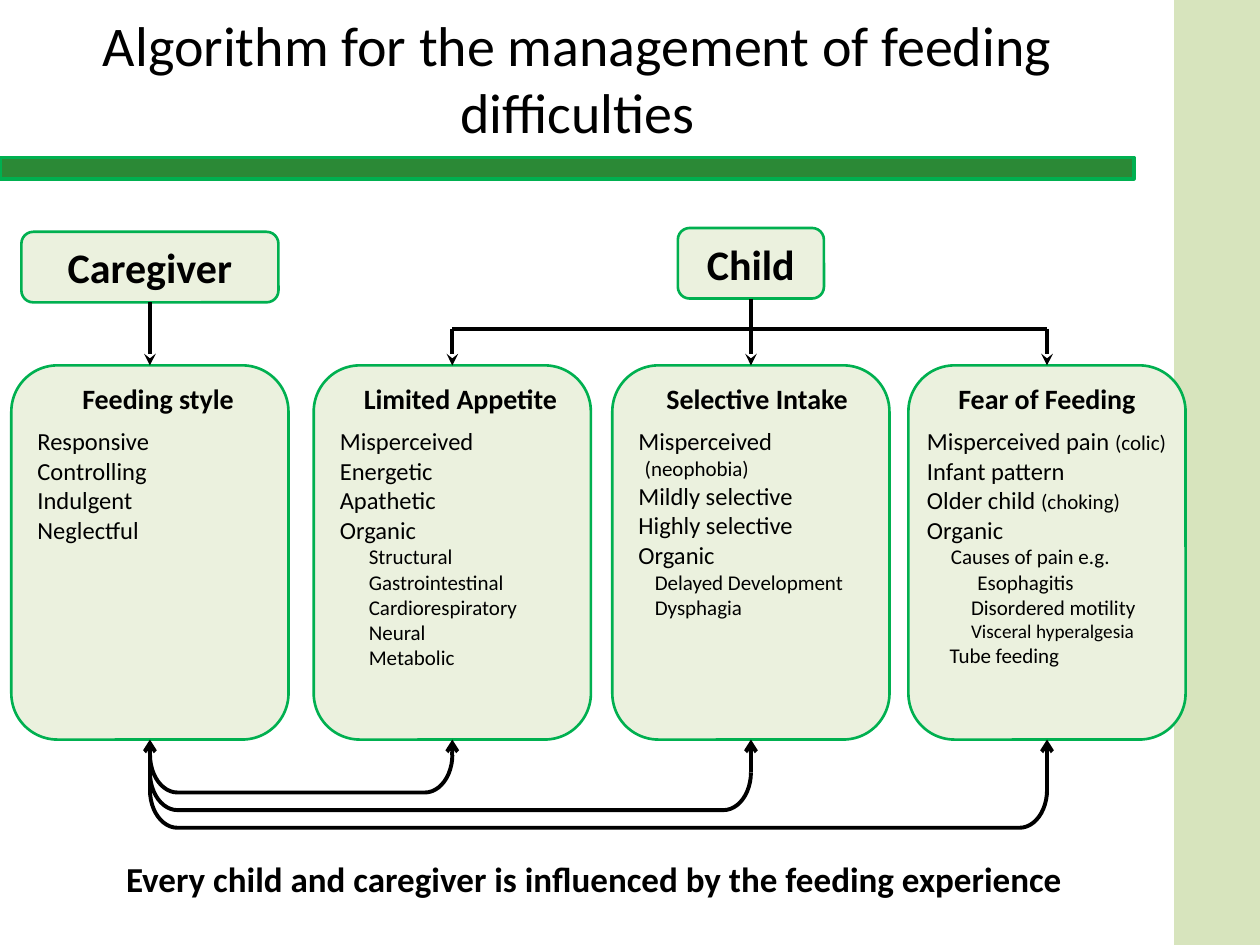
from dataclasses import dataclass

from lxml import etree
from pptx import Presentation
from pptx.dml.color import RGBColor
from pptx.enum.shapes import MSO_CONNECTOR, MSO_SHAPE
from pptx.enum.text import MSO_ANCHOR, PP_ALIGN
from pptx.oxml.ns import qn
from pptx.util import Inches, Pt

BLACK = RGBColor(0x00, 0x00, 0x00)
GREEN = RGBColor(0x00, 0xB0, 0x50)
DARK_GREEN = RGBColor(0x2B, 0x89, 0x36)
BAND_GREEN = RGBColor(0xD7, 0xE4, 0xBD)
PALE_GREEN = RGBColor(0xEB, 0xF1, 0xDE)
RECTANGLE, ROUNDED = MSO_SHAPE.RECTANGLE, MSO_SHAPE.ROUNDED_RECTANGLE
BRACKET = MSO_SHAPE.RIGHT_BRACKET
STRAIGHT = MSO_CONNECTOR.STRAIGHT
CENTER, LEFT = PP_ALIGN.CENTER, PP_ALIGN.LEFT
MIDDLE, TOP = MSO_ANCHOR.MIDDLE, MSO_ANCHOR.TOP
TOP_SITE, BOTTOM_SITE = 0, 2
COLUMNS, ROWS = 100, 75


@dataclass
class Item:
    text: str
    size: int = 14
    margin: float = 0.6
    first: float = 0
    note: str = ""


class FeedingSlide:
    """Draw the parts of the slide on a grid of 100 columns and 75 rows."""

    font = "Calibri"

    def __init__(self, deck):
        self.column = deck.slide_width / COLUMNS
        self.row = deck.slide_height / ROWS
        self.shapes = deck.slides.add_slide(deck.slide_layouts[6]).shapes

    def place(self, left, top, width, height):
        return (round(left * self.column), round(top * self.row),
                round(width * self.column), round(height * self.row))

    def box(self, kind, area, fill, line, weight):
        shape = self.shapes.add_shape(kind, *self.place(*area))
        shape.shadow.inherit = False
        if fill is None:
            shape.fill.background()
        else:
            shape.fill.solid()
            shape.fill.fore_color.rgb = fill
        shape.line.color.rgb = line
        shape.line.width = Pt(weight)
        return shape

    def frame(self, shape, anchor, inset):
        frame = shape.text_frame
        frame.word_wrap = True
        frame.vertical_anchor = anchor
        frame.margin_left = frame.margin_right = round(inset * self.column)
        frame.margin_top = frame.margin_bottom = round(inset * self.row)
        return frame

    def style(self, span, size, bold=False):
        span.font.name = self.font
        span.font.size = Pt(size)
        span.font.bold = bold
        span.font.color.rgb = BLACK

    def caption(self, shape, text, size, bold=True):
        para = self.frame(shape, MIDDLE, 0.4).paragraphs[0]
        para.text = text
        para.alignment = CENTER
        self.style(para.runs[0], size, bold)

    def label(self, area, text, size, bold):
        self.caption(self.shapes.add_textbox(*self.place(*area)), text, size, bold)

    def heading(self, area, text):
        shape = self.box(ROUNDED, area, PALE_GREEN, GREEN, 1.5)
        self.caption(shape, text, 24)
        return shape

    def indent(self, para, margin, first):
        properties = para._p.get_or_add_pPr()
        properties.set("marL", str(round(margin * self.column)))
        properties.set("indent", str(round(first * self.column)))

    def card(self, area, title, title_margin, items):
        shape = self.box(ROUNDED, area, PALE_GREEN, GREEN, 1.5)
        frame = self.frame(shape, TOP, 0.4)
        para = frame.paragraphs[0]
        para.text = title
        para.alignment = CENTER
        para.line_spacing = 0.95
        para.space_after = Pt(6)
        self.indent(para, title_margin, 0)
        self.style(para.runs[0], 16, True)
        for item in items:
            para = frame.add_paragraph()
            para.text = item.text
            para.alignment = LEFT
            self.indent(para, item.margin, item.first)
            for span in para.runs:
                self.style(span, item.size)
            if item.note:
                span = para.add_run()
                span.text = item.note
                self.style(span, 12)
        return shape

    def line(self, start, end, head=None, source=None, target=None, site=TOP_SITE):
        connector = self.shapes.add_connector(STRAIGHT, *self.place(*start, *end))
        if source is not None:
            connector.begin_connect(source, BOTTOM_SITE)
        if target is not None:
            connector.end_connect(target, site)
        connector.line.color.rgb = BLACK
        connector.line.width = Pt(2.25)
        if head:
            etree.SubElement(connector.line._get_or_add_ln(), qn("a:tailEnd"), type=head)
        etree.SubElement(connector._element.spPr, qn("a:effectLst"))

    def loop(self, start, end, top, depth=3):
        span = end - start
        area = ((start + end - depth) / 2, top + (depth - span) / 2, depth, span)
        bracket = self.box(BRACKET, area, None, BLACK, 2.25)
        bracket.adjustments[0] = 0.73
        bracket.rotation = 90


CARD_TOP, CARD_WIDTH, CARD_HEIGHT = 29, 22, 29.7
CARD_BOTTOM = CARD_TOP + CARD_HEIGHT
BRANCH = 26.1
CARDS = [
    (0.9, "Feeding style", 1.3, [
        Item(text) for text in ("Responsive", "Controlling", "Indulgent", "Neglectful")]),
    (24.9, "Limited Appetite", 1.3, [
        *(Item(text) for text in ("Misperceived", "Energetic", "Apathetic", "Organic")),
        *(Item(text, 12, 2.9) for text in (
            "Structural", "Gastrointestinal", "Cardiorespiratory", "Neural", "Metabolic"))]),
    (48.6, "Selective Intake", 1, [
        Item("Misperceived\v", margin=1.1, first=-0.5, note="(neophobia)"),
        *(Item(text) for text in ("Mildly selective", "Highly selective", "Organic")),
        *(Item(text, 12, 1.9) for text in ("Delayed Development", "Dysphagia"))]),
    (72.1, "Fear of Feeding", 0, [
        Item("Misperceived pain ", margin=0, note="(colic)"),
        Item("Infant pattern", margin=0),
        Item("Older child ", margin=0, note="(choking)"),
        Item("Organic", margin=0),
        Item("Causes of pain e.g.\vEsophagitis", 12, 4, -2.1),
        Item("Disordered motility", 12, 3.5),
        Item("Visceral hyperalgesia", 11, 3.5),
        Item("Tube feeding", 12, 1.8)]),
]


def main():
    deck = Presentation()
    deck.slide_width, deck.slide_height = Inches(10), Inches(7.5)
    page = FeedingSlide(deck)
    page.box(RECTANGLE, (0, 12.5, 90, 1.7), DARK_GREEN, GREEN, 2)
    page.box(RECTANGLE, (93.3, 0, 6.7, 75), BAND_GREEN, BAND_GREEN, 2)
    page.label((1.7, -0.8, 88.3, 13.9),
               "Algorithm for the management of feeding difficulties", 32, False)

    cards = [page.card((left, CARD_TOP, CARD_WIDTH, CARD_HEIGHT), *content)
             for left, *content in CARDS]
    centers = [left + CARD_WIDTH / 2 for left, *_ in CARDS]
    caregiver = page.heading((centers[0] - 10.2, 18.4, 20.4, 5.6), "Caregiver")
    child = page.heading((centers[2] - 5.8, 18.1, 11.6, 5.6), "Child")

    page.line((centers[1], BRANCH), (centers[3], BRANCH))
    sources = (caregiver, None, child, None)
    for center, source, card in zip(centers, sources, cards):
        page.line((center, BRANCH), (center, CARD_TOP), "stealth", source, card)

    loop_tops = [59.9 + 1.4 * step for step in range(3)]
    for center, card, top in zip(centers[1:], cards[1:], loop_tops):
        page.loop(centers[0], center, top)
        page.line((center, top), (center, CARD_BOTTOM), "arrow", None, card, BOTTOM_SITE)
    page.line((centers[0], loop_tops[-1]), (centers[0], CARD_BOTTOM), "arrow",
              None, cards[0], BOTTOM_SITE)

    page.label((2.6, 66.2, 89.1, 7.1),
               "Every child and caregiver is influenced by the feeding experience", 20, True)
    deck.save("out.pptx")


if __name__ == "__main__":
    main()
